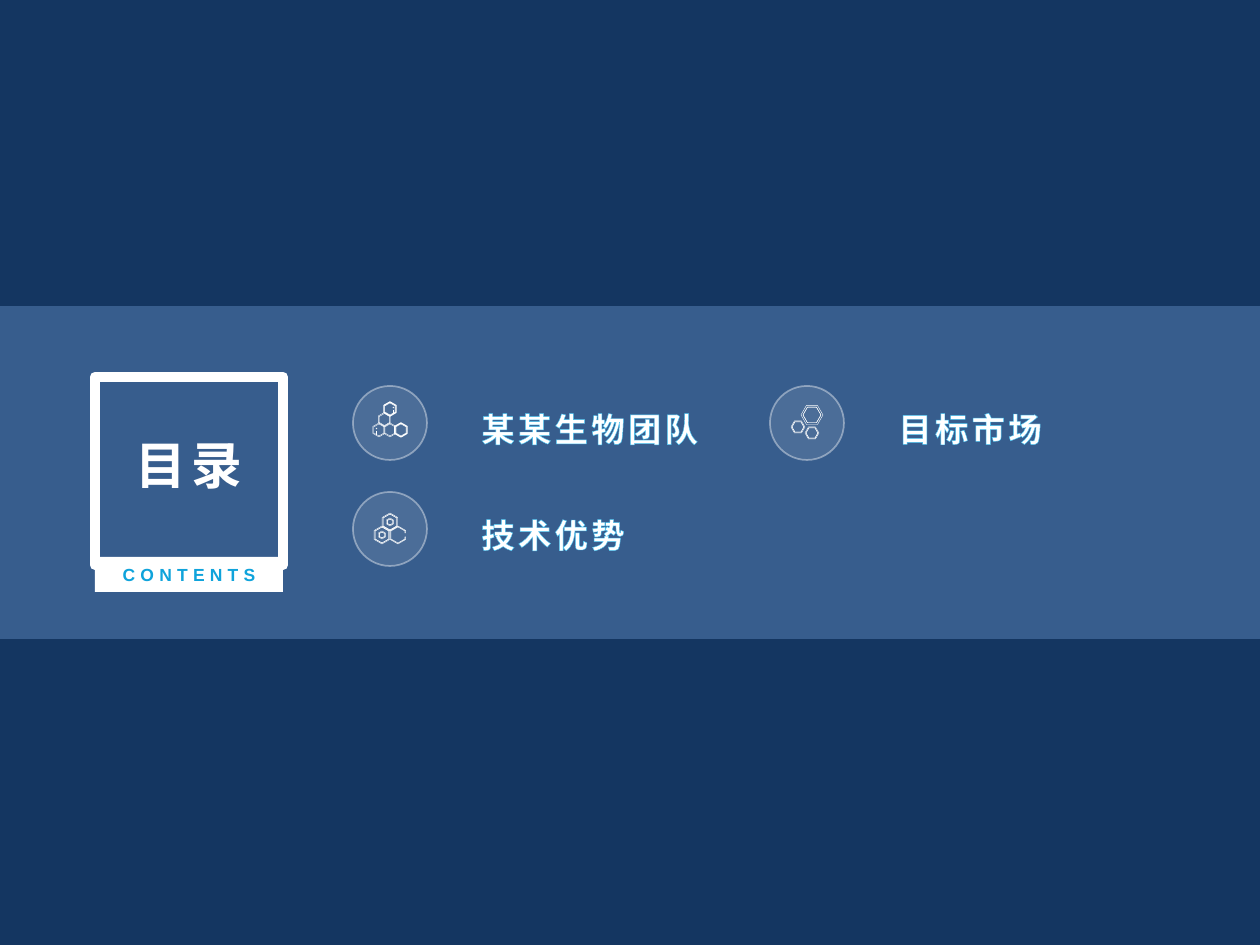
import math
from lxml import etree
from pptx import Presentation
from pptx import util as u
from pptx.dml.color import RGBColor
from pptx.enum import shapes, text
from pptx.oxml.ns import qn

PX_PER_INCH = 126
WHITE, NAVY, BAND, CYAN, BLUE = "FFFFFF", "143661", "7DAAE4", "47C3F2", "0FA3DB"
HAIRLINE = 0.23


def px(length):
    return u.Emu(round(length * 914400 / PX_PER_INCH))


def rgb(value):
    return RGBColor.from_string(value)


def set_alpha(parent, percent):
    color = parent.find(".//" + qn("a:srgbClr"))
    etree.SubElement(color, qn("a:alpha")).set("val", str(percent * 1000))


def style(shape, fill=None, fill_alpha=None, line=None, weight=1, line_alpha=None):
    shape.shadow.inherit = False
    if fill:
        shape.fill.solid()
        shape.fill.fore_color.rgb = rgb(fill)
        if fill_alpha:
            set_alpha(shape._element.spPr.find(qn("a:solidFill")), fill_alpha)
    else:
        shape.fill.background()
    if line:
        shape.line.color.rgb = rgb(line)
        shape.line.width = u.Pt(weight)
        if line_alpha:
            set_alpha(shape._element.spPr.find(qn("a:ln")), line_alpha)
    else:
        shape.line.fill.background()


def add_preset(page, kind, left, top, width, height, **look):
    shape = page.shapes.add_shape(kind, px(left), px(top), px(width), px(height))
    style(shape, **look)
    return shape


def write(box, words, size, color, spacing, anchor, align, outline=None):
    frame = box.text_frame
    frame.word_wrap = True
    frame.vertical_anchor = anchor
    para = frame.paragraphs[0]
    para.alignment = align
    span = para.add_run()
    span.text = words
    span.font.name = "Arial"
    span.font.size = u.Pt(size)
    span.font.bold = True
    span.font.color.rgb = rgb(color)
    props = span.font._element
    props.set("spc", str(spacing * 100))
    if outline:
        line = etree.Element(qn("a:ln"), w=str(u.Pt(0.75)))
        fill = etree.SubElement(line, qn("a:solidFill"))
        etree.SubElement(fill, qn("a:srgbClr")).set("val", outline)
        props.insert(0, line)


def add_text(page, left, top, width, height, *args, **look):
    box = page.shapes.add_textbox(px(left), px(top), px(width), px(height))
    write(box, *args, **look)


def hexagon(x, y, radius, first_angle):
    angles = [math.radians(first_angle + 60 * step) for step in range(6)]
    return [(x + radius * math.cos(a), y + radius * math.sin(a)) for a in angles]


def add_outline(page, contours, weight=HAIRLINE):
    points = [[(px(x), px(y)) for x, y in contour] for contour in contours]
    builder = page.shapes.build_freeform(*points[0][0], scale=1.0)
    builder.add_line_segments(points[0][1:], close=True)
    for contour in points[1:]:
        builder.move_to(*contour[0])
        builder.add_line_segments(contour[1:], close=True)
    style(builder.convert_to_shape(), line=WHITE, weight=weight)


def add_hexagons(page, x, y, radii, first_angle, weight=HAIRLINE):
    add_outline(page, [hexagon(x, y, r, first_angle) for r in radii], weight)


def add_team_icon(page):
    # Honeycomb cells: column offset, row above the base, line weight
    cells = [(-0.5, 1, HAIRLINE), (-1, 0, HAIRLINE), (0, 0, HAIRLINE),
             (1, 0, 0.75), (0, 2, 0.75)]
    for column, row, weight in cells:
        x, y = 390 + 11 * column, 430 - 10.5 * row
        add_hexagons(page, x, y, [7], 30, weight)
        add_hexagons(page, x, y, [6], 30)
    # Highlights inside two cells
    for x, dot_top, tick_top in [(393, 407, 410), (376, 428, 431)]:
        add_preset(page, shapes.MSO_SHAPE.OVAL, x, dot_top, 1, 1,
                   line=WHITE, weight=HAIRLINE)
        tick = page.shapes.add_connector(shapes.MSO_CONNECTOR.STRAIGHT,
                                         px(x), px(tick_top), px(x), px(tick_top + 4))
        tick.line.color.rgb = rgb(WHITE)
        tick.line.width = u.Pt(HAIRLINE)
        etree.SubElement(tick._element.spPr, qn("a:effectLst"))


def open_side(x, y, radius, gap):
    edge = x + radius * math.cos(math.radians(30))
    return [(edge, y + gap), *hexagon(x, y, radius, 30), (edge, y - gap)]


def add_technology_icon(page):
    for x, y in [(382, 535), (390, 522)]:
        add_hexagons(page, x, y, [9, 8, 4, 3], 30)
        add_hexagons(page, x, y, [8, 3], 30)
    # Third cell is open on its right side
    add_outline(page, [open_side(398, 535, 9, 2) + open_side(398, 535, 8, 2)[::-1]])


def add_market_icon(page):
    for x, y, outer, inner in [(812, 415, 11, 9), (798, 427, 7, 6), (812, 433, 7, 6)]:
        add_hexagons(page, x, y, [inner], 0)
        add_hexagons(page, x, y, [outer, inner], 0)


def add_topic(page, column, row, words, add_icon):
    left, top = 353 + 417 * column, 386 + 106 * row
    add_preset(page, shapes.MSO_SHAPE.OVAL, left, top, 74, 74, fill=WHITE,
               fill_alpha=10, line=WHITE, line_alpha=40)
    add_text(page, left + 116, top + 14, 296, 57, words, 19, WHITE, 2,
             text.MSO_ANCHOR.MIDDLE, text.PP_ALIGN.LEFT, outline=CYAN)
    add_icon(page)


def add_heading(page):
    add_preset(page, shapes.MSO_SHAPE.RECTANGLE, 95, 377, 188, 188, line=WHITE, weight=6)
    tag = add_preset(page, shapes.MSO_SHAPE.RECTANGLE, 95, 557, 188, 35, fill=WHITE)
    write(tag, "CONTENTS", 10, BLUE, 3, text.MSO_ANCHOR.MIDDLE, text.PP_ALIGN.CENTER)
    add_text(page, 107, 417, 163, 84, "目录", 29, WHITE, 3,
             text.MSO_ANCHOR.BOTTOM, text.PP_ALIGN.CENTER)


def main():
    deck = Presentation()
    deck.slide_width, deck.slide_height = px(1260), px(945)
    page = deck.slides.add_slide(deck.slide_layouts[6])
    page.background.fill.solid()
    page.background.fill.fore_color.rgb = rgb(NAVY)
    # Band across the slide
    add_preset(page, shapes.MSO_SHAPE.RECTANGLE, 0, 306, 1260, 333,
               fill=BAND, fill_alpha=34)
    add_heading(page)
    # Topics on a grid
    add_topic(page, 0, 0, "某某生物团队", add_team_icon)
    add_topic(page, 1, 0, "目标市场", add_market_icon)
    add_topic(page, 0, 1, "技术优势", add_technology_icon)
    deck.save("out.pptx")


if __name__ == "__main__":
    main()
